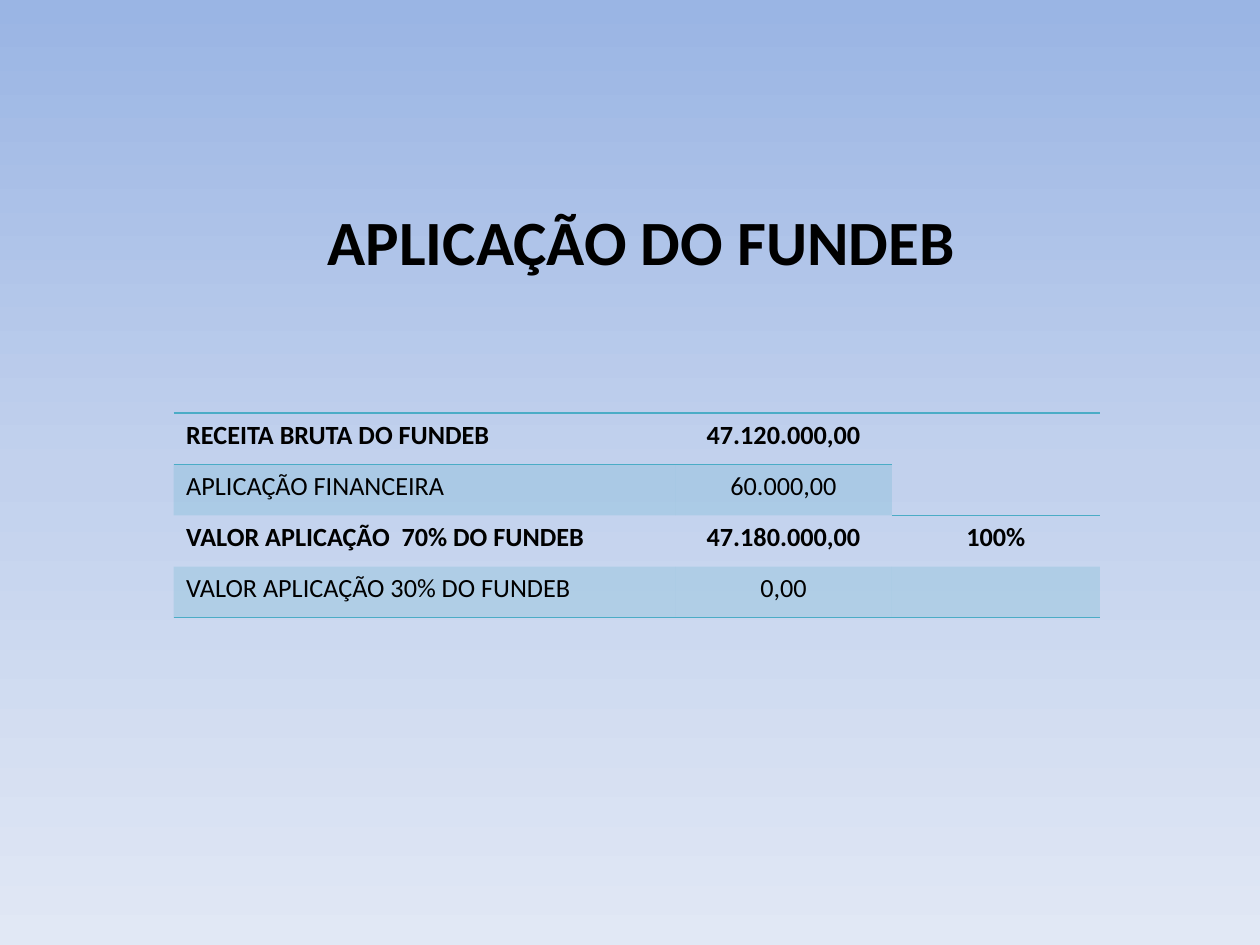
from copy import deepcopy
from dataclasses import dataclass

from lxml import etree
from pptx import Presentation
from pptx import util as u
from pptx.dml.color import RGBColor
from pptx.enum import text
from pptx.oxml import ns

BLACK = RGBColor(0x00, 0x00, 0x00)
TEAL = RGBColor(0x4B, 0xAC, 0xC6)
BACKGROUND_STOPS = [
    (0, RGBColor(0x9A, 0xB5, 0xE4)),
    (0.5, RGBColor(0xC2, 0xD1, 0xED)),
    (1, RGBColor(0xE1, 0xE8, 0xF5)),
]
FONT = "Calibri"
NO_STYLE = "{2D5ABB26-0587-4C30-8999-92F81FD0307C}"
COLUMN_WIDTHS = [u.Cm(10.11), u.Cm(4.37), u.Cm(4.19)]
ROW_HEIGHT = u.Cm(1.03)


@dataclass
class FundRow:
    label: str
    amount: str
    share: str = ""
    bold: bool = False
    shaded: bool = False
    borders: tuple[str, ...] = ()


ROWS = [
    FundRow("RECEITA BRUTA DO FUNDEB", "47.120.000,00", bold=True,
            borders=("lnT", "lnB")),
    FundRow("APLICAÇÃO FINANCEIRA", "60.000,00", shaded=True),
    FundRow("VALOR APLICAÇÃO  70% DO FUNDEB", "47.180.000,00", "100%", bold=True),
    FundRow("VALOR APLICAÇÃO 30% DO FUNDEB", "0,00", shaded=True, borders=("lnB",)),
]


def write_text(frame, content: str, *, size: float, bold: bool = False,
               align=text.PP_ALIGN.CENTER) -> None:
    paragraph = frame.paragraphs[0]
    paragraph.alignment = align
    run = paragraph.add_run()
    run.text = content
    run.font.name = FONT
    run.font.size = u.Pt(size)
    run.font.bold = bold
    run.font.color.rgb = BLACK


def paint_background(slide) -> None:
    fill = slide.background.fill
    fill.gradient()
    fill.gradient_angle = 270
    stop_list = slide.element.xpath(".//a:gsLst")[0]
    stop_list.append(deepcopy(stop_list[0]))
    for stop, (position, color) in zip(fill.gradient_stops, BACKGROUND_STOPS):
        stop.position = position
        stop.color.rgb = color


def add_border(cell, side: str) -> None:
    properties = cell._tc.get_or_add_tcPr()
    line = etree.SubElement(properties, ns.qn(f"a:{side}"), w=str(u.Pt(1)))
    solid = etree.SubElement(line, ns.qn("a:solidFill"))
    etree.SubElement(solid, ns.qn("a:srgbClr"), val=str(TEAL))


def shade(cell) -> None:
    cell.fill.solid()
    cell.fill.fore_color.rgb = TEAL
    color = cell._tc.tcPr.xpath("./a:solidFill/a:srgbClr")[0]
    etree.SubElement(color, ns.qn("a:alpha"), val="20000")


def fill_row(table, index: int, row: FundRow) -> None:
    table.rows[index].height = ROW_HEIGHT
    for column, content in enumerate((row.label, row.amount, row.share)):
        cell = table.cell(index, column)
        if cell.is_spanned:
            continue
        for side in row.borders:
            add_border(cell, side)
        if row.shaded:
            shade(cell)
        else:
            cell.fill.background()
        if content:
            align = text.PP_ALIGN.CENTER if column else text.PP_ALIGN.LEFT
            write_text(cell.text_frame, content, size=15, bold=row.bold, align=align)


def add_fund_table(slide) -> None:
    frame = slide.shapes.add_table(
        len(ROWS), len(COLUMN_WIDTHS), u.Cm(3.5), u.Cm(8.33),
        sum(COLUMN_WIDTHS), ROW_HEIGHT * len(ROWS))
    table = frame.table
    table.first_row = table.horz_banding = False
    table._tbl.xpath("./a:tblPr/a:tableStyleId")[0].text = NO_STYLE
    for column, width in zip(table.columns, COLUMN_WIDTHS):
        column.width = width
    # The share column has one cell for the first two rows
    table.cell(0, 2).merge(table.cell(1, 2))
    for index, row in enumerate(ROWS):
        fill_row(table, index, row)


def main() -> None:
    presentation = Presentation()
    presentation.slide_width, presentation.slide_height = u.Cm(25.4), u.Cm(19.05)
    slide = presentation.slides.add_slide(presentation.slide_layouts[6])
    paint_background(slide)

    # Title
    title = slide.shapes.add_textbox(u.Cm(1.5), u.Cm(1.93), u.Cm(22.86), u.Cm(3.81))
    title.text_frame.word_wrap = True
    title.text_frame.vertical_anchor = text.MSO_ANCHOR.BOTTOM
    write_text(title.text_frame, "APLICAÇÃO DO FUNDEB", size=36, bold=True)

    # Fund values
    add_fund_table(slide)
    presentation.save("out.pptx")


if __name__ == "__main__":
    main()
